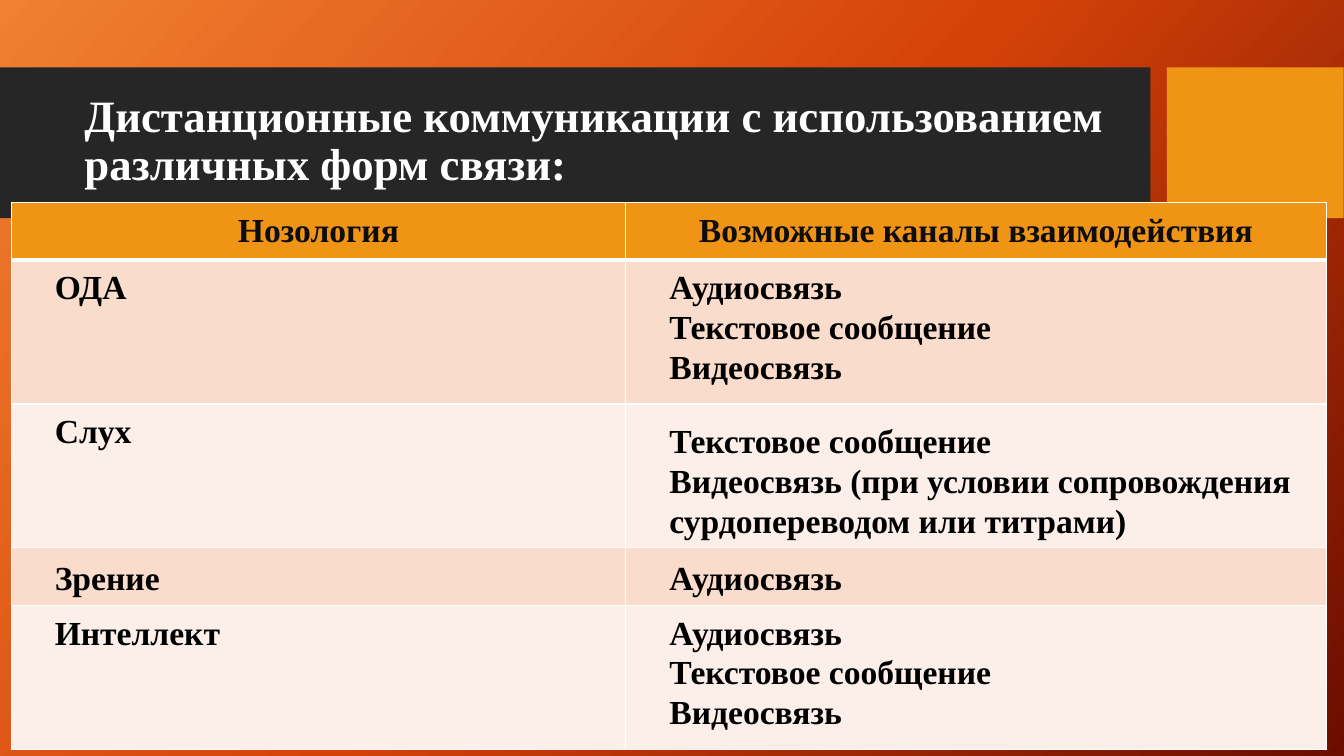
"""Slide listing the remote communication channels suited to each nosology."""
from copy import deepcopy
from dataclasses import dataclass

from lxml import etree
from pptx import Presentation
from pptx.dml.color import RGBColor
from pptx.enum.shapes import MSO_SHAPE
from pptx.enum.text import MSO_ANCHOR, PP_ALIGN
from pptx.oxml.ns import qn
from pptx.util import Cm, Pt

RECTANGLE = MSO_SHAPE.RECTANGLE
TOP, MIDDLE, BOTTOM = MSO_ANCHOR.TOP, MSO_ANCHOR.MIDDLE, MSO_ANCHOR.BOTTOM
LEFT, CENTER = PP_ALIGN.LEFT, PP_ALIGN.CENTER


@dataclass(frozen=True)
class Theme:
    """Colours, font and type sizes of the slide."""
    font: str = "Times New Roman"
    title_size: int = 32
    table_size: int = 24
    white: str = "FFFFFF"
    black: str = "000000"
    header_text: str = "0D0D0D"
    band: str = "262626"
    accent: str = "F09415"
    row_fills: tuple = ("F9DCCC", "FCEEE8")
    background: tuple = ((0, "F18031"), (0.5, "D54209"), (1, "6A0D00"))
    background_angle: int = 42


class SlideBuilder:
    """Draws styled elements on one slide."""

    def __init__(self, slide, theme):
        """Keep the slide and its theme."""
        self.slide = slide
        self.theme = theme

    def background(self):
        """Fill the background with the three-stop gradient."""
        fill = self.slide.background.fill
        fill.gradient()
        fill.gradient_angle = 360 - self.theme.background_angle
        stop_list = self.slide.element.find(".//" + qn("a:gsLst"))
        stop_list.insert(1, deepcopy(stop_list[0]))
        for stop, (position, color) in zip(fill.gradient_stops, self.theme.background):
            stop.position = position
            stop.color.rgb = RGBColor.from_string(color)

    def block(self, left, top, width, height, color):
        """Add a plain rectangle."""
        shape = self.slide.shapes.add_shape(
            RECTANGLE, Cm(left), Cm(top), Cm(width), Cm(height))
        shape.shadow.inherit = False
        shape.fill.solid()
        shape.fill.fore_color.rgb = RGBColor.from_string(color)
        shape.line.fill.background()

    def add_text(self, paragraph, text, size, color, spacing, align=LEFT):
        """Add one bold run to a paragraph."""
        paragraph.alignment = align
        paragraph.line_spacing = spacing
        run = paragraph.add_run()
        run.text = text
        run.font.name = self.theme.font
        run.font.size = Pt(size)
        run.font.bold = True
        run.font.color.rgb = RGBColor.from_string(color)

    def title(self, left, top, width, height, text):
        """Add the slide title."""
        box = self.slide.shapes.add_textbox(Cm(left), Cm(top), Cm(width), Cm(height))
        frame = box.text_frame
        frame.word_wrap = True
        frame.vertical_anchor = MIDDLE
        self.add_text(frame.paragraphs[0], text, self.theme.title_size,
                      self.theme.white, 0.9)

    def borders(self, cell, top, bottom):
        """Draw the four cell borders with the given top and bottom widths."""
        properties = cell._tc.get_or_add_tcPr()
        widths = {"a:lnL": 1, "a:lnR": 1, "a:lnT": top, "a:lnB": bottom}
        for index, (tag, width) in enumerate(widths.items()):
            line = etree.Element(qn(tag), w=str(Pt(width)))
            fill = etree.SubElement(line, qn("a:solidFill"))
            etree.SubElement(fill, qn("a:srgbClr"), val=self.theme.white)
            properties.insert(index, line)

    def cell(self, cell, lines, fill, color, anchor=TOP, align=LEFT, indent=0):
        """Fill a table cell with one paragraph per line."""
        cell.fill.solid()
        cell.fill.fore_color.rgb = RGBColor.from_string(fill)
        cell.vertical_anchor = anchor
        cell.margin_left = cell.margin_right = Cm(0.1)
        cell.margin_top = cell.margin_bottom = Cm(0.18)
        frame = cell.text_frame
        for index, text in enumerate(lines):
            paragraph = frame.add_paragraph() if index else frame.paragraphs[0]
            paragraph._p.get_or_add_pPr().set("marL", str(Cm(indent)))
            self.add_text(paragraph, text, self.theme.table_size, color, 1.07, align)

    def table(self, left, top, widths, heights, header, rows):
        """Add the table; each row holds cells of (lines, anchor)."""
        table = self.slide.shapes.add_table(
            len(heights), len(widths), Cm(left), Cm(top),
            Cm(sum(widths)), Cm(sum(heights))).table
        for column, width in zip(table.columns, widths):
            column.width = Cm(width)
        for row, height in zip(table.rows, heights):
            row.height = Cm(height)
        for column, text in enumerate(header):
            cell = table.cell(0, column)
            self.cell(cell, [text], self.theme.accent, self.theme.header_text,
                      align=CENTER)
            self.borders(cell, 1, 3)
        for index, row in enumerate(rows):
            fill = self.theme.row_fills[index % 2]
            for column, (lines, anchor) in enumerate(row):
                cell = table.cell(index + 1, column)
                self.cell(cell, lines, fill, self.theme.black, anchor, indent=1)
                self.borders(cell, 1 if index else 3, 1)


def main():
    """Build and save the presentation."""
    presentation = Presentation()
    presentation.slide_width = Cm(33.87)
    presentation.slide_height = Cm(19.05)
    theme = Theme()
    builder = SlideBuilder(
        presentation.slides.add_slide(presentation.slide_layouts[6]), theme)

    builder.background()
    builder.block(0, 1.7, 28.99, 3.8, theme.band)
    builder.block(29.41, 1.7, 4.45, 3.8, theme.accent)
    builder.title(1.88, 2.08, 26.7, 3,
                  "Дистанционные коммуникации с использованием различных форм связи:")

    audio, message, video = "Аудиосвязь", "Текстовое сообщение", "Видеосвязь"
    captioned = video + " (при условии сопровождения сурдопереводом или титрами)"
    all_channels = [audio, message, video]
    short, tall = 1.45, 3.58
    builder.table(
        0.28, 5.11, (15.49, 17.65), (short, tall, tall, short, tall),
        ("Нозология", "Возможные каналы взаимодействия"),
        (
            ((["ОДА"], TOP), (all_channels, TOP)),
            ((["Слух"], TOP), ([message, captioned], BOTTOM)),
            ((["Зрение"], BOTTOM), ([audio], BOTTOM)),
            ((["Интеллект"], TOP), (all_channels, TOP)),
        ))
    presentation.save("out.pptx")


if __name__ == "__main__":
    main()
